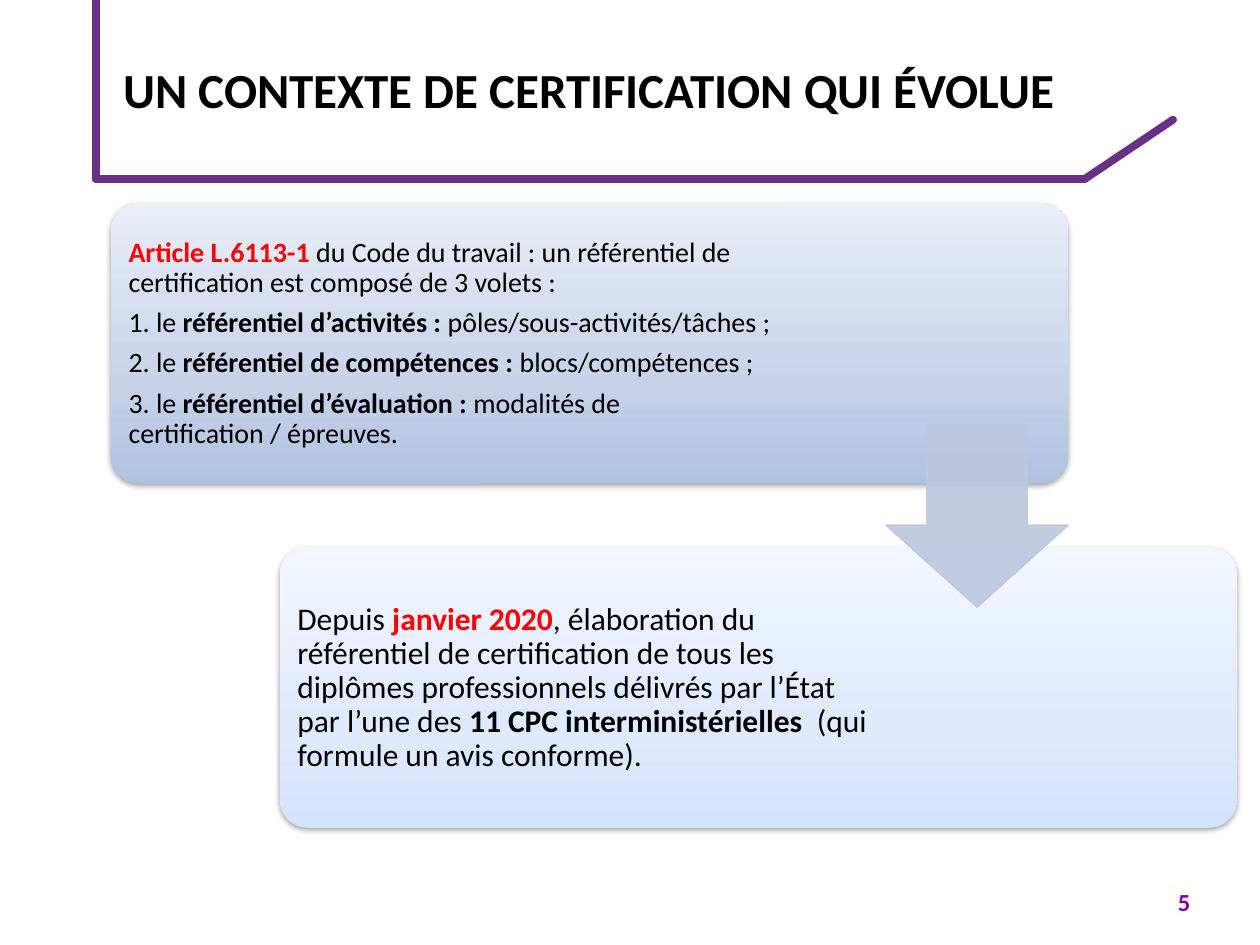
from lxml import etree
from pptx import Presentation
from pptx import util as u
from pptx.dml.color import RGBColor
from pptx.enum import shapes, text
from pptx.oxml.ns import qn

COLORS = {
    "rule": "683086",
    "number": "7B00AC",
    "text": "000000",
    "accent": "FF0000",
    "arrow": "BBC7DE",
    "shadow": "000000",
}
FONT = "Calibri"


def add_text(s, box, paragraphs, size, margins=None, anchor=text.MSO_ANCHOR.MIDDLE,
             spacing=None, after=0):
    """Each paragraph is a list of (words, bold, colour key) runs."""
    tf = s.shapes.add_textbox(*map(u.Inches, box)).text_frame
    tf.word_wrap = True
    tf.vertical_anchor = anchor
    if margins is not None:
        tf.margin_left = tf.margin_right = u.Inches(margins)
        tf.margin_top = tf.margin_bottom = u.Inches(margins)
    for i, runs in enumerate(paragraphs):
        p = tf.paragraphs[0] if i == 0 else tf.add_paragraph()
        p.line_spacing = spacing
        p.space_after = u.Pt(after)
        for words, bold, color in runs:
            r = p.add_run()
            r.text = words
            r.font.name, r.font.size, r.font.bold = FONT, u.Pt(size), bold
            r.font.color.rgb = RGBColor.from_string(COLORS[color])


def add_color(parent, color, alpha=None):
    clr = etree.SubElement(parent, qn("a:srgbClr"), val=color)
    if alpha is not None:
        etree.SubElement(clr, qn("a:alpha"), val=str(alpha * 1000))


prs = Presentation()
prs.slide_width, prs.slide_height = u.Inches(10), u.Inches(7.5)
s = prs.slides.add_slide(prs.slide_layouts[6])

# Title rule
points = [(0.76, 0), (0.76, 1.42), (8.61, 1.42), (9.31, 0.95)]
for start, end in zip(points, points[1:]):
    line = s.shapes.add_connector(shapes.MSO_CONNECTOR.STRAIGHT,
                                  *map(u.Inches, start + end))
    line.line.color.rgb = RGBColor.from_string(COLORS["rule"])
    line.line.width = u.Pt(4.5)
    line.line._get_or_add_ln().set("cap", "rnd")
    etree.SubElement(line._element.spPr, qn("a:effectLst"))

# Title and slide number
add_text(s, (0.88, 0, 8.62, 1.41),
         [[("UN CONTEXTE DE CERTIFICATION QUI ÉVOLUE", True, "text")]], 28)
add_text(s, (9.25, 6.99, 0.67, 0.4), [[("5", True, "number")]], 14,
         anchor=text.MSO_ANCHOR.TOP, after=6)

# Content of the two steps
volets = [
    ("1. le ", "référentiel d’activités : ", "pôles/sous-activités/tâches ;"),
    ("2. le ", "référentiel de compétences : ", "blocs/compétences ;"),
    ("3. le ", "référentiel d’évaluation : ", "modalités de certification / épreuves."),
]
article = [[
    ("Article L.6113-1 ", True, "accent"),
    ("du Code du travail : un référentiel de certification est composé de 3 volets :",
     False, "text"),
]]
for lead, name, detail in volets:
    article.append([(lead, False, "text"), (name, True, "text"), (detail, False, "text")])
depuis = [[
    ("Depuis ", False, "text"),
    ("janvier 2020", True, "accent"),
    (", élaboration du référentiel de certification de tous les diplômes "
     "professionnels délivrés par l’État par l’une des ", False, "text"),
    ("11 CPC interministérielles  ", True, "text"),
    ("(qui formule un avis conforme).", False, "text"),
]]
# left, top, text width, font size, gradient from bottom to top, paragraphs
steps = [
    (0.88, 1.61, 5.29, 16, ("AFC0E1", "C7D2E9", "E9EEF7"), article),
    (2.22, 4.34, 4.68, 18, ("D4E2FD", "E0EAFE", "F2F6FF"), depuis),
]

# Step panels
for left, top, text_width, size, gradient, paragraphs in steps:
    sp = s.shapes.add_shape(shapes.MSO_SHAPE.ROUNDED_RECTANGLE,
                            *map(u.Inches, (left, top, 7.6, 2.23)))
    sp.adjustments[0] = 0.1
    sp.line.fill.background()
    sp.fill.gradient()
    sp.fill.gradient_angle = 90
    stops = sp._element.spPr.find(".//" + qn("a:gsLst"))
    for stop in list(stops):
        stops.remove(stop)
    for pos, color in zip((0, 35, 100), gradient):
        add_color(etree.SubElement(stops, qn("a:gs"), pos=str(pos * 1000)), color)

    sp.shadow.inherit = False
    effects = sp._element.spPr.find(qn("a:effectLst"))
    shadow = etree.SubElement(effects, qn("a:outerShdw"), blurRad=str(u.Pt(3.1)),
                              dist=str(u.Pt(1.6)), dir="5400000", rotWithShape="0")
    add_color(shadow, COLORS["shadow"], 38)

    add_text(s, (left + 0.07, top + 0.07, text_width, 2.1), paragraphs, size,
             margins=0.07, spacing=0.9, after=size * 0.35)

# Arrow between the steps
sp = s.shapes.add_shape(shapes.MSO_SHAPE.DOWN_ARROW,
                        *map(u.Inches, (7.03, 3.37, 1.45, 1.45)))
sp.adjustments[0], sp.adjustments[1] = 0.55, 0.45
sp.shadow.inherit = False
sp.fill.solid()
sp.line.width = u.Pt(0.75)
for fill in (sp.fill, sp.line.fill):
    fill.solid()
    fill.fore_color.rgb = RGBColor.from_string(COLORS["arrow"])
for clr in sp._element.spPr.iter(qn("a:srgbClr")):
    etree.SubElement(clr, qn("a:alpha"), val="90000")

prs.save("out.pptx")
